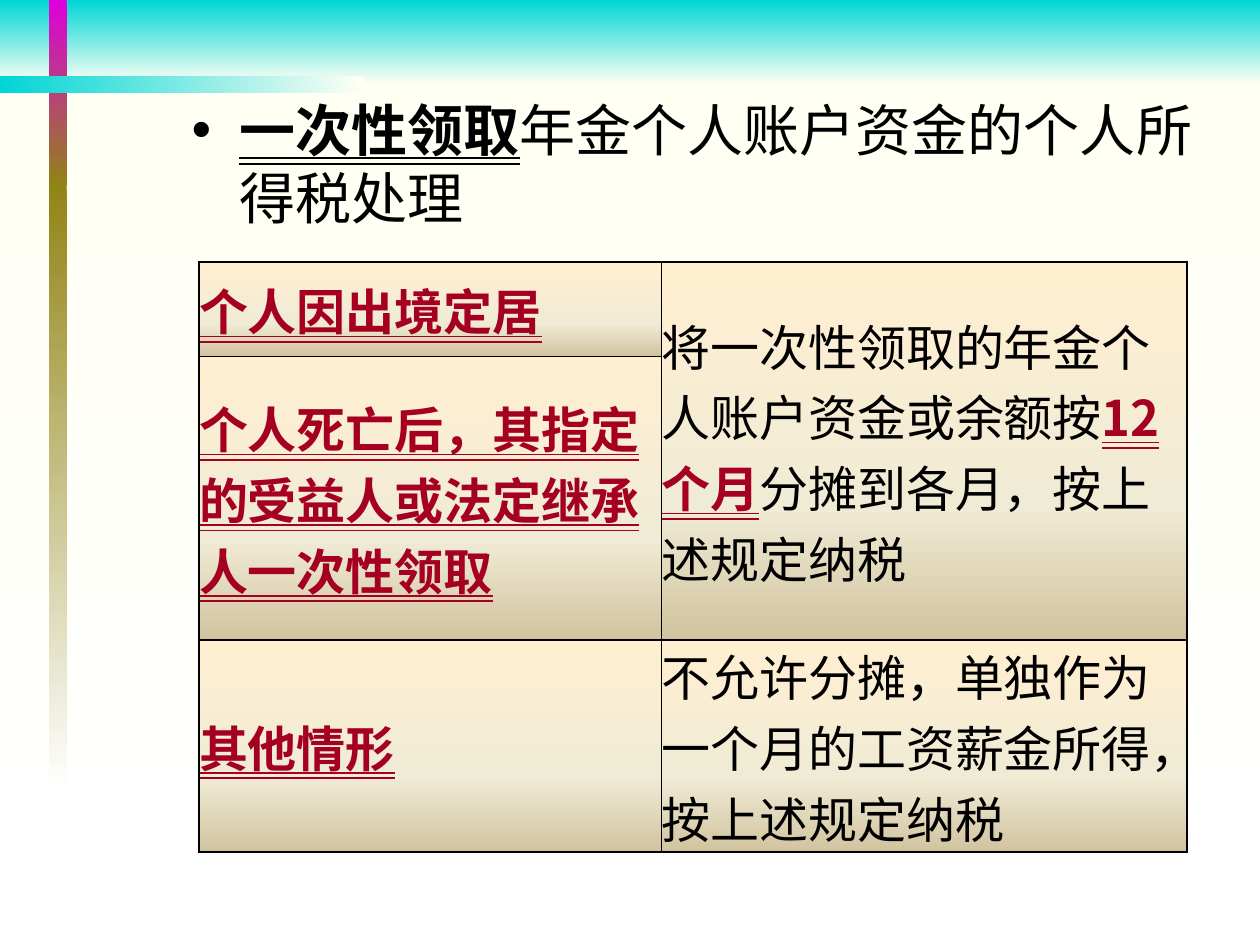
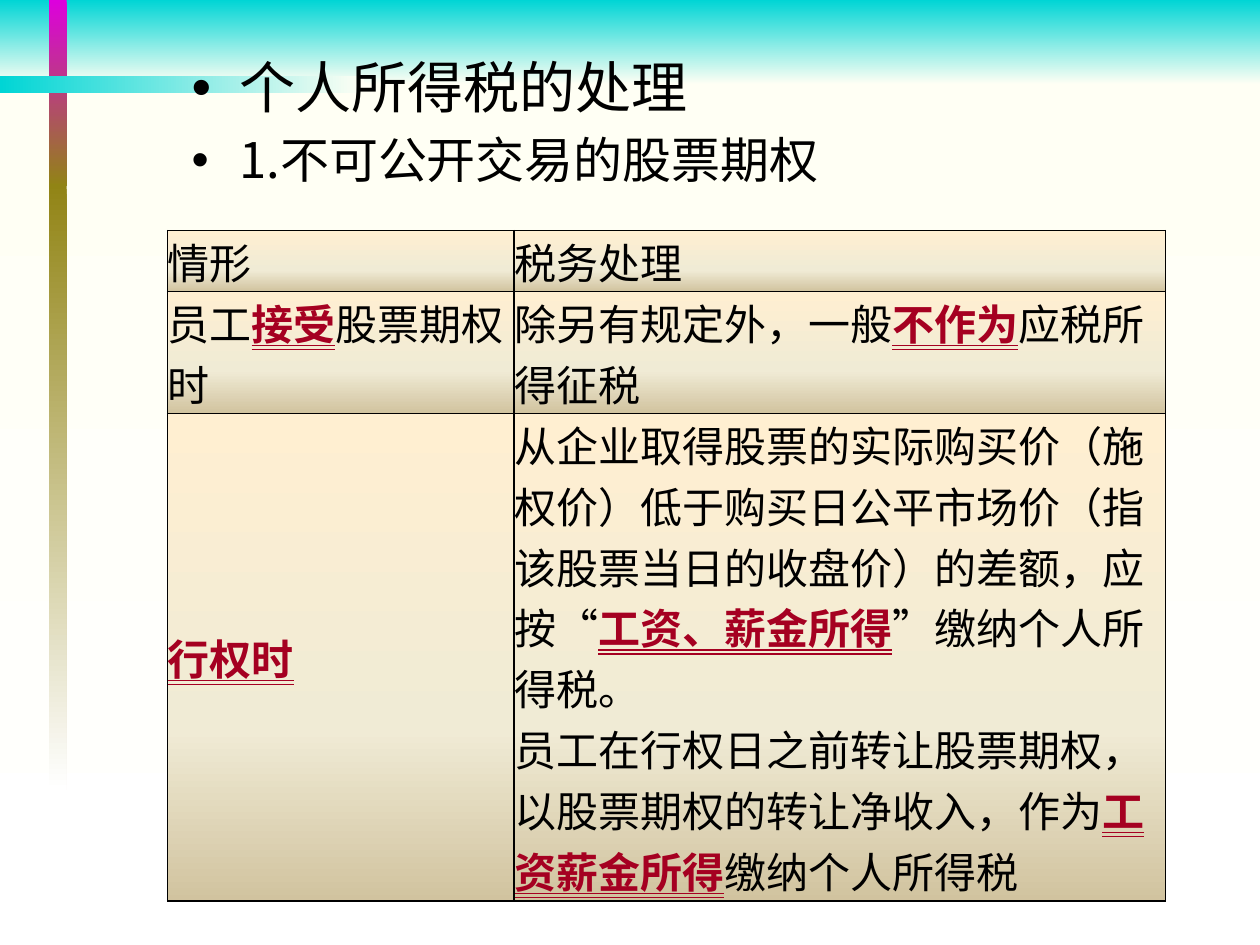
from dataclasses import dataclass
from typing import NamedTuple

from lxml import etree
from pptx import Presentation
from pptx.dml.color import RGBColor
from pptx.enum import shapes, text
from pptx.oxml import ns
from pptx.util import Inches, Pt

Stops = tuple[tuple[int, str], ...]
CJK = "Noto Sans CJK SC"
SERIF = "Times New Roman"


@dataclass(frozen=True)
class Theme:
    ink: str = "000000"
    red: str = "A50021"
    sky: str = "00D5D5"
    cream: str = "FFFFF4"
    white: str = "FFFFFF"
    pink: str = "DD00DD"
    olive: str = "918415"
    cell: Stops = ((0, "FFEFD1"), (65, "F0EBD5"), (100, "D1C39F"))
    head: int = 32
    sub: int = 28
    small: int = 24
    pitch: float = 1.2
    rule: float = 1


T = Theme()


class Band(NamedTuple):
    box: tuple[float, ...]
    start: str
    end: str
    angle: int = 90


class Item(NamedTuple):
    words: str
    size: int
    face: str = CJK


class Cell(NamedTuple):
    words: str
    face: str = CJK
    span: int = 1


class Grid(NamedTuple):
    left: float
    top: float
    cols: tuple[float, ...]
    rows: tuple[float, ...]
    size: int
    cells: tuple[tuple[Cell | None, ...], ...]


class Page(NamedTuple):
    box: tuple[float, ...]
    items: tuple[Item, ...]
    grid: Grid


BANDS = (
    Band((0, 0, 10, 0.67), T.sky, T.cream),
    Band((0, 0.67, 10, 6.83), T.cream, T.white),
    Band((0.39, 0, 0.14, 1.48), T.pink, T.olive),
    Band((0.39, 1.46, 0.14, 4.81), T.olive, T.white),
    Band((0, 0.6, 2.89, 0.14), T.sky, T.cream, 0),
)

PAGES = (
    Page(
        (1.42, 0.67, 8.5, 1.08),
        (Item("*一次性领取*年金个人账户资金的个人所得税处理", T.head, "Roboto Condensed"),),
        Grid(1.58, 2.08, (3.67, 4.17), (0.75, 1.5, 1.5), T.sub, (
            (Cell("*个人因出境定居*"),
             Cell("将一次性领取的年金个人账户资金或余额按*12个月*分摊到各月，按上述规定纳税", SERIF, 2)),
            (Cell("*个人死亡后，其指定的受益人或法定继承人一次性领取*"), None),
            (Cell("*其他情形*"),
             Cell("不允许分摊，单独作为一个月的工资薪金所得，按上述规定纳税", SERIF)),
        )),
    ),
    Page(
        (1.42, 0.33, 8.5, 1.5),
        (Item("个人所得税的处理", T.head), Item("1.不可公开交易的股票期权", T.sub)),
        Grid(1.33, 1.83, (2.75, 5.17), (0.45, 0.8, 3.2), T.small, (
            (Cell("情形", SERIF), Cell("税务处理", SERIF)),
            (Cell("员工*接受*股票期权时"), Cell("除另有规定外，一般*不作为*应税所得征税")),
            (Cell("*行权时*"),
             Cell("从企业取得股票的实际购买价（施权价）低于购买日公平市场价"
                  "（指该股票当日的收盘价）的差额，应按“*工资、薪金所得*”缴纳个人所得税。\n"
                  "员工在行权日之前转让股票期权，以股票期权的转让净收入，"
                  "作为*工资薪金所得*缴纳个人所得税")),
        )),
    ),
)


def add(parent, tag: str, **attrs):
    return etree.SubElement(parent, ns.qn(tag), attrs)


def blend(fill, root, stops: Stops, angle: int = 90) -> None:
    fill.gradient()
    root.find(".//" + ns.qn("a:lin")).set("ang", str(angle * 60000))
    ramp = root.find(".//" + ns.qn("a:gsLst"))
    for old in list(ramp):
        ramp.remove(old)
    for pos, tone in stops:
        add(add(ramp, "a:gs", pos=str(pos * 1000)), "a:srgbClr", val=tone)


def stress(font, tone: str) -> None:
    font.bold = True
    font.underline = text.MSO_UNDERLINE.DOUBLE_LINE
    font.color.rgb = RGBColor.from_string(tone)


def write(para, words: str, size: int, face: str, tone: str) -> None:
    font = para.font
    font.size = Pt(size)
    font.name = face
    font.color.rgb = RGBColor.from_string(T.ink)
    add(para._p.pPr.find(ns.qn("a:defRPr")), "a:ea", typeface=CJK)
    parts = [(part, i % 2) for i, part in enumerate(words.split("*")) if part]
    for part, strong in parts:
        for i, line in enumerate(part.split("\n")):
            if i:
                para.add_line_break()
            run = para.add_run()
            run.text = line
            if strong:
                stress(font if len(parts) == 1 else run.font, tone)
                if len(parts) > 1:
                    run.font.name = CJK


def draw_band(slide, band: Band):
    shape = slide.shapes.add_shape(
        shapes.MSO_SHAPE.RECTANGLE, *map(Inches, band.box))
    shape.shadow.inherit = False
    shape.line.fill.background()
    blend(shape.fill, shape.element, ((0, band.start), (100, band.end)), band.angle)
    return shape.element


def dress(deck, slide) -> None:
    tree = deck.slide_master.shapes.element
    for i, band in enumerate(BANDS):
        tree.insert(2 + i, draw_band(slide, band))


def draw_list(slide, box: tuple[float, ...], items: tuple[Item, ...]) -> None:
    body = slide.placeholders[1]
    body.left, body.top, body.width, body.height = map(Inches, box)
    frame = body.text_frame
    frame.auto_size = text.MSO_AUTO_SIZE.NONE
    frame.vertical_anchor = text.MSO_ANCHOR.TOP
    frame.margin_top = Inches(0.09)
    for i, item in enumerate(items):
        para = frame.add_paragraph() if i else frame.paragraphs[0]
        props = para._p.get_or_add_pPr()
        props.set("marL", str(Inches(0.38)))
        props.set("indent", str(-Inches(0.38)))
        add(props, "a:buFont", typeface="Arial")
        add(props, "a:buChar", char="•")
        para.line_spacing = Pt(item.size * T.pitch)
        para.space_before = Pt(item.size * 0.2 if i else 0)
        write(para, item.words, item.size, item.face, T.ink)


def frame_cell(cell) -> None:
    props = cell._tc.get_or_add_tcPr()
    for i, side in enumerate("LRTB"):
        line = add(props, f"a:ln{side}", w=str(Pt(T.rule)))
        add(add(line, "a:solidFill"), "a:srgbClr", val=T.ink)
        props.insert(i, line)


def draw_grid(slide, grid: Grid) -> None:
    table = slide.shapes.add_table(
        len(grid.rows), len(grid.cols), Inches(grid.left), Inches(grid.top),
        Inches(sum(grid.cols)), Inches(sum(grid.rows))).table
    table.first_row = table.horz_banding = False
    for col, width in zip(table.columns, grid.cols):
        col.width = Inches(width)
    for row, height in zip(table.rows, grid.rows):
        row.height = Inches(height)
    for r, line in enumerate(grid.cells):
        for c, data in enumerate(line):
            cell = table.cell(r, c)
            blend(cell.fill, cell._tc, T.cell)
            frame_cell(cell)
            cell.margin_left = cell.margin_right = 0
            cell.margin_top = cell.margin_bottom = 0
            cell.vertical_anchor = text.MSO_ANCHOR.MIDDLE
            if data:
                write(cell.text_frame.paragraphs[0], data.words, grid.size, data.face, T.red)
                if data.span > 1:
                    cell.merge(table.cell(r + data.span - 1, c))


def main() -> None:
    deck = Presentation()
    deck.slide_width, deck.slide_height = Inches(10), Inches(7.5)
    for i, page in enumerate(PAGES):
        slide = deck.slides.add_slide(deck.slide_layouts[1])
        title = slide.shapes.title.element
        title.getparent().remove(title)
        if not i:
            dress(deck, slide)
        draw_list(slide, page.box, page.items)
        draw_grid(slide, page.grid)
    deck.save("out.pptx")


if __name__ == "__main__":
    main()
